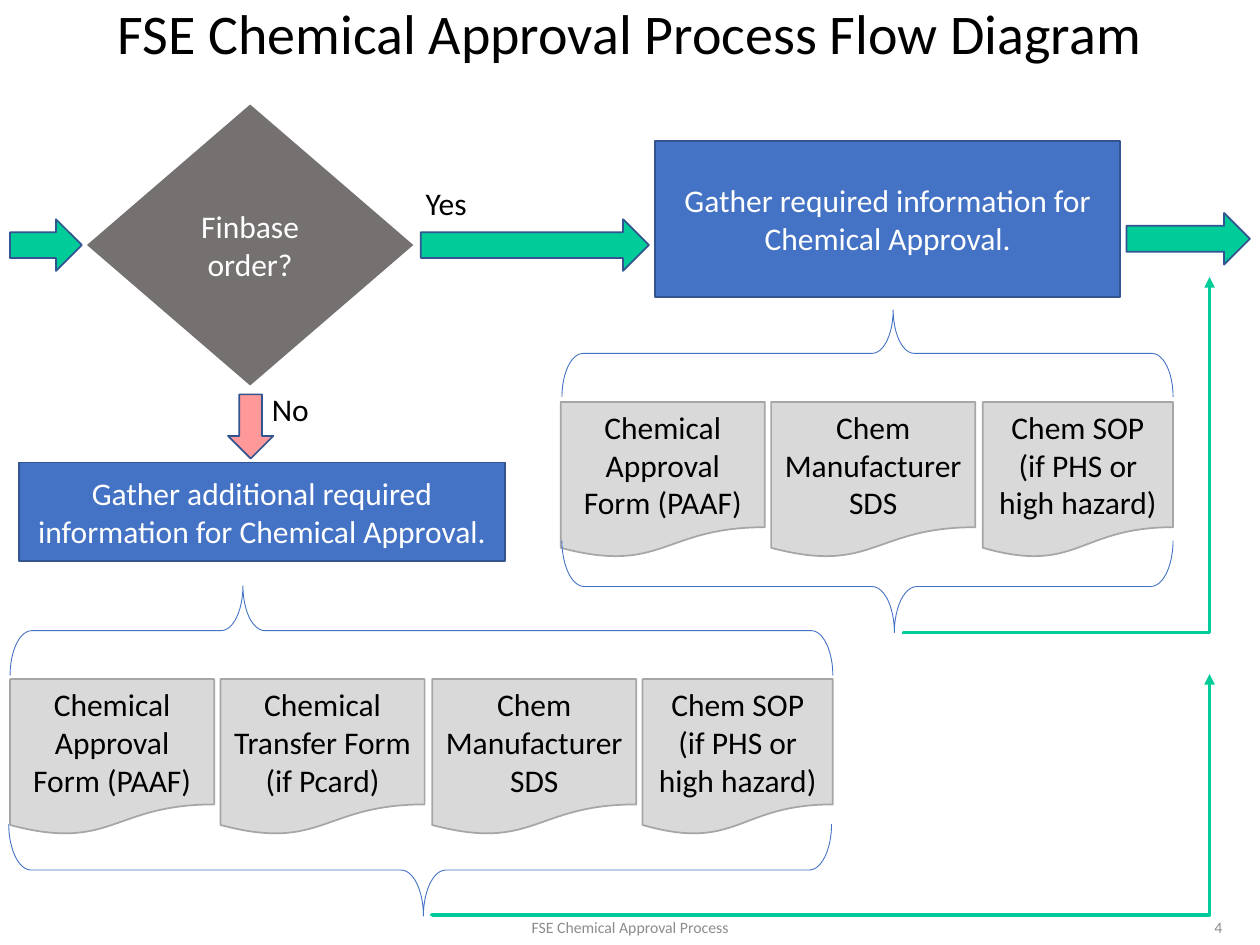
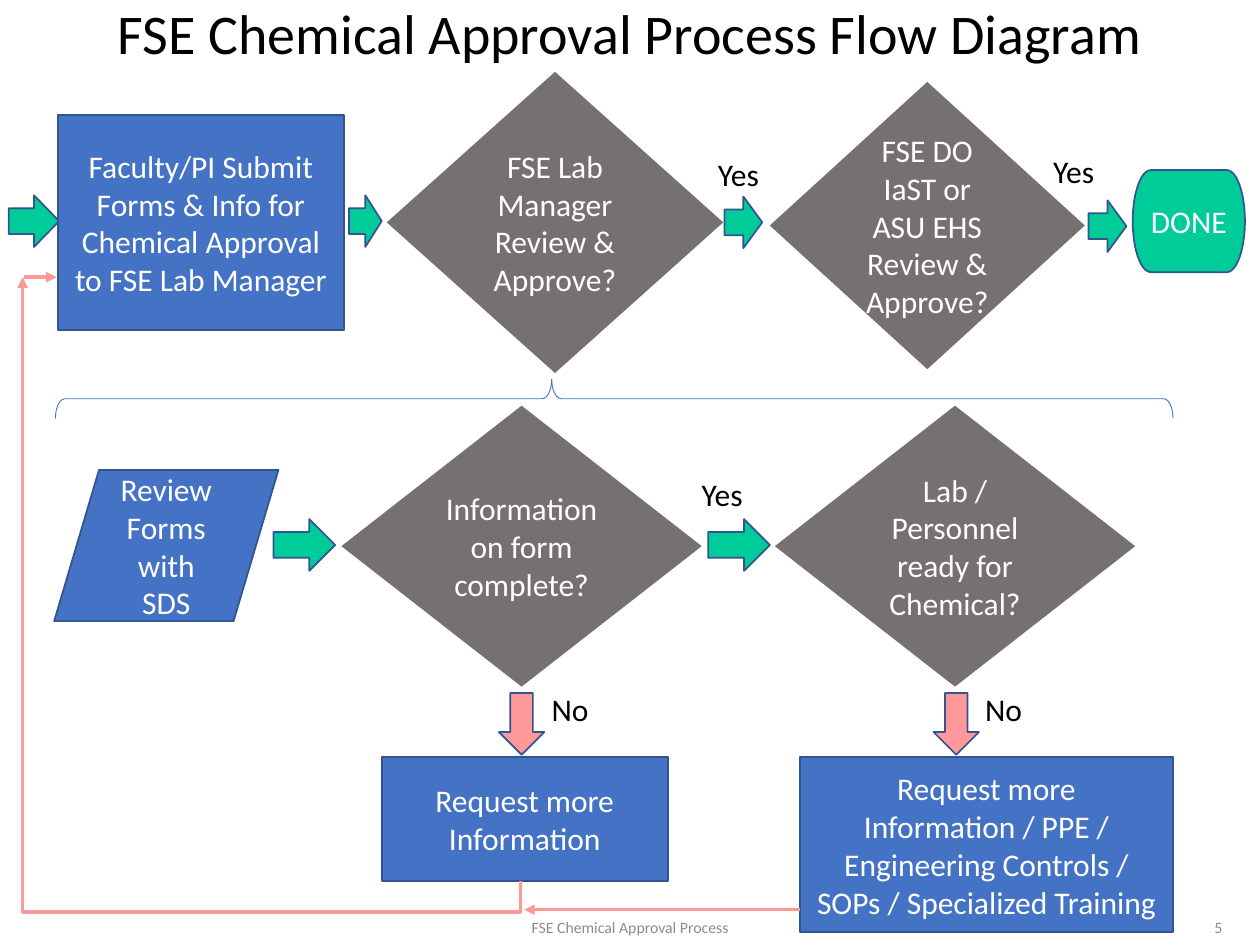
from dataclasses import dataclass
from typing import NamedTuple

from lxml.etree import SubElement
from pptx import Presentation
from pptx.dml.color import RGBColor
from pptx.enum.shapes import MSO_CONNECTOR as Connector, MSO_SHAPE as Preset
from pptx.enum.text import MSO_ANCHOR as Anchor, MSO_AUTO_SIZE as AutoSize, PP_ALIGN as Align
from pptx.oxml.ns import qn
from pptx.util import Emu, Pt

EMU_PER_PX = 9144  # 100 px to the inch
SLIDE_SIZE = (1000, 750)
TITLE = "FSE Chemical Approval Process Flow Diagram"
FOOTER = "FSE Chemical Approval Process"


@dataclass(frozen=True)
class Theme:
    font: str = "Calibri"
    title_size: int = 32
    body_size: int = 18
    footer_size: int = 9
    black: str = "000000"
    white: str = "FFFFFF"
    blue: str = "4472C4"
    outline: str = "325491"
    stone: str = "767171"
    paper: str = "D9D9D9"
    paper_edge: str = "A6A6A6"
    yes: str = "00CC99"
    no: str = "FF9999"
    footer: str = "8C8C8C"


THEME = Theme()


# What the slides are made of
class Style(NamedTuple):
    preset: Preset
    fill: str
    line: str | None
    text: str = THEME.white


STEP = Style(Preset.RECTANGLE, THEME.blue, THEME.outline)
DECISION = Style(Preset.FLOWCHART_DECISION, THEME.stone, None)
DOCUMENT = Style(Preset.FLOWCHART_DOCUMENT, THEME.paper, THEME.paper_edge, THEME.black)
REVIEW = Style(Preset.FLOWCHART_DATA, THEME.blue, THEME.outline)
END = Style(Preset.FLOWCHART_TERMINATOR, THEME.yes, THEME.outline)
ONWARD = Style(Preset.RIGHT_ARROW, THEME.yes, THEME.outline)
REJECT = Style(Preset.DOWN_ARROW, THEME.no, THEME.outline)


class Box(NamedTuple):
    left: int
    top: int
    width: int
    height: int


class Node(NamedTuple):
    style: Style
    box: Box
    text: str = ""


class Brace(NamedTuple):
    box: Box
    tip: float  # position of the point along the brace
    rotation: int  # 90 points up, 270 points down


class Arrow(NamedTuple):
    begin: tuple[int, int]
    end: tuple[int, int]
    color: str
    bend: float | None = None  # None is straight


class Label(NamedTuple):
    text: str
    left: int
    top: int


class Page(NamedTuple):
    number: int
    nodes: list[Node]
    braces: list[Brace]
    arrows: list[Arrow]
    labels: list[Label]


def document_row(left: int, top: int, texts: list[str]) -> list[Node]:
    """Documents at an even pitch, the last one narrower."""
    last = len(texts) - 1
    return [
        Node(DOCUMENT, Box(left + index * 335 // 2, top, 151 if index == last else 162, 124), text)
        for index, text in enumerate(texts)
    ]


FORM = "Chemical Approval Form (PAAF)"
TRANSFER = "Chemical Transfer Form (if Pcard)"
SDS = "Chem Manufacturer SDS"
SOP = "Chem SOP (if PHS or high hazard)"

GATHERING = Page(
    number=4,
    nodes=[
        Node(ONWARD, Box(8, 174, 57, 41)),
        Node(DECISION, Box(69, 83, 259, 223), "Finbase order?"),
        Node(ONWARD, Box(334, 174, 181, 41)),
        Node(REJECT, Box(181, 313, 36, 51)),
        Node(STEP, Box(15, 367, 386, 78), "Gather additional required information for Chemical Approval."),
        Node(STEP, Box(520, 112, 369, 124), "Gather required information for Chemical Approval."),
        Node(ONWARD, Box(894, 169, 98, 41)),
        *document_row(8, 539, [FORM, TRANSFER, SDS, SOP]),
        *document_row(445, 319, [FORM, SDS, SOP]),
    ],
    braces=[
        Brace(Box(8, 465, 653, 71), 0.717, 90),
        Brace(Box(446, 246, 485, 69), 0.458, 90),
        Brace(Box(7, 654, 653, 73), 0.504, 270),
        Brace(Box(446, 429, 485, 73), 0.544, 270),
    ],
    arrows=[
        Arrow((343, 727), (960, 535), THEME.yes, 0.004),
        Arrow((717, 503), (960, 220), THEME.yes, 0.004),
    ],
    labels=[Label("Yes", 328, 141), Label("No", 206, 305)],
)

REVIEWING = Page(
    number=5,
    nodes=[
        Node(ONWARD, Box(7, 155, 40, 41)),
        Node(ONWARD, Box(277, 155, 26, 41)),
        Node(STEP, Box(46, 91, 227, 171),
             "Faculty/PI Submit Forms & Info for Chemical Approval to FSE Lab Manager"),
        Node(ONWARD, Box(575, 156, 30, 41)),
        Node(REVIEW, Box(43, 373, 178, 120), "Review Forms with SDS"),
        Node(DECISION, Box(271, 322, 286, 223), "Information on form complete?"),
        Node(ONWARD, Box(217, 412, 49, 41)),
        Node(REJECT, Box(396, 550, 36, 49)),
        Node(STEP, Box(303, 601, 227, 98), "Request more Information"),
        Node(DECISION, Box(615, 322, 286, 223), "Lab / Personnel ready for Chemical?"),
        Node(ONWARD, Box(562, 412, 49, 41)),
        Node(STEP, Box(635, 601, 296, 139),
             "Request more Information / PPE / Engineering Controls / SOPs / Specialized Training"),
        Node(REJECT, Box(741, 550, 36, 49)),
        Node(DECISION, Box(611, 65, 250, 228), "FSE DO IaST or ASU EHS Review & Approve?"),
        Node(DECISION, Box(307, 57, 267, 239), "FSE Lab Manager Review & Approve?"),
        Node(ONWARD, Box(864, 159, 30, 41)),
        Node(END, Box(899, 135, 89, 81), "DONE"),
    ],
    braces=[Brace(Box(44, 301, 887, 31), 0.556, 90)],
    arrows=[
        Arrow((413, 699), (18, 220), THEME.no, -0.052),
        Arrow((19, 220), (45, 220), THEME.no),
        Arrow((635, 722), (416, 722), THEME.no),
    ],
    labels=[
        Label("Yes", 560, 118),
        Label("Yes", 826, 116),
        Label("Yes", 547, 372),
        Label("No", 428, 543),
        Label("No", 772, 543),
    ],
)


# Drawing
def px(length: float) -> Emu:
    return Emu(round(length * EMU_PER_PX))


def rgb(color: str) -> RGBColor:
    return RGBColor.from_string(color)


def write(shape, text: str, size: int, color: str, align: Align, anchor: Anchor) -> None:
    text_frame = shape.text_frame
    text_frame.text = text
    text_frame.word_wrap = True
    text_frame.vertical_anchor = anchor
    paragraph = text_frame.paragraphs[0]
    paragraph.alignment = align
    for run in paragraph.runs:
        run.font.name = THEME.font
        run.font.size = Pt(size)
        run.font.color.rgb = rgb(color)


def add_text(slide, box: Box, text: str, size: int, color: str, align: Align, anchor: Anchor):
    shape = slide.shapes.add_textbox(*map(px, box))
    write(shape, text, size, color, align, anchor)
    return shape


def add_node(slide, node: Node) -> None:
    style = node.style
    shape = slide.shapes.add_shape(style.preset, *map(px, node.box))
    shape.shadow.inherit = False
    shape.fill.solid()
    shape.fill.fore_color.rgb = rgb(style.fill)
    if style.line:
        shape.line.color.rgb = rgb(style.line)
        shape.line.width = Pt(1)
    else:
        shape.line.fill.background()
    if node.text:
        write(shape, node.text, THEME.body_size, style.text, Align.CENTER, Anchor.MIDDLE)


def add_brace(slide, brace: Brace) -> None:
    left, top, width, height = brace.box
    shift = (width - height) / 2
    upright = (left + shift, top - shift, height, width)
    shape = slide.shapes.add_shape(Preset.LEFT_BRACE, *map(px, upright))
    shape.rotation = brace.rotation
    shape.adjustments[0] = 0.243
    shape.adjustments[1] = brace.tip
    shape.shadow.inherit = False
    shape.fill.background()
    shape.line.color.rgb = rgb(THEME.blue)
    shape.line.width = Pt(0.5)


def add_arrow(slide, arrow: Arrow) -> None:
    (x1, y1), (x2, y2) = arrow.begin, arrow.end
    kind = Connector.STRAIGHT
    if arrow.bend is not None:
        # A quarter turn makes the elbow leave and arrive vertically
        kind = Connector.ELBOW
        middle_x, middle_y = (x1 + x2) / 2, (y1 + y2) / 2
        half_x, half_y = x1 - middle_x, y1 - middle_y
        x1, y1 = middle_x + half_y, middle_y - half_x
        x2, y2 = middle_x - half_y, middle_y + half_x
    connector = slide.shapes.add_connector(kind, px(x1), px(y1), px(x2), px(y2))
    connector.line.color.rgb = rgb(arrow.color)
    connector.line.width = Pt(2)
    properties = connector._element.spPr
    if arrow.bend is not None:
        properties.find(qn("a:xfrm")).set("rot", str(90 * 60000))
        adjustments = properties.find(qn("a:prstGeom")).find(qn("a:avLst"))
        SubElement(adjustments, qn("a:gd"), name="adj1", fmla=f"val {round(arrow.bend * 100000)}")
    SubElement(properties.find(qn("a:ln")), qn("a:tailEnd"), type="triangle")
    SubElement(properties, qn("a:effectLst"))


def add_label(slide, label: Label) -> None:
    box = Box(label.left, label.top, 53 if label.text == "Yes" else 50, 40)
    shape = add_text(slide, box, label.text, THEME.body_size, THEME.black, Align.LEFT, Anchor.TOP)
    shape.text_frame.word_wrap = False
    shape.text_frame.auto_size = AutoSize.SHAPE_TO_FIT_TEXT


def add_page(presentation, page: Page) -> None:
    slide = presentation.slides.add_slide(presentation.slide_layouts[6])
    title = add_text(slide, Box(69, 0, 862, 106), TITLE, THEME.title_size, THEME.black,
                     Align.CENTER, Anchor.TOP)
    title.text_frame.paragraphs[0].line_spacing = 0.9
    for node in page.nodes:
        add_node(slide, node)
    for brace in page.braces:
        add_brace(slide, brace)
    for arrow in page.arrows:
        add_arrow(slide, arrow)
    for label in page.labels:
        add_label(slide, label)
    # Footer and slide number
    for box, text, align in (
        (Box(331, 722, 338, 28), FOOTER, Align.CENTER),
        (Box(755, 722, 225, 28), str(page.number), Align.RIGHT),
    ):
        add_text(slide, box, text, THEME.footer_size, THEME.footer, align, Anchor.MIDDLE)


def main() -> None:
    presentation = Presentation()
    presentation.slide_width, presentation.slide_height = map(px, SLIDE_SIZE)
    for page in (GATHERING, REVIEWING):
        add_page(presentation, page)
    presentation.save("out.pptx")


if __name__ == "__main__":
    main()
